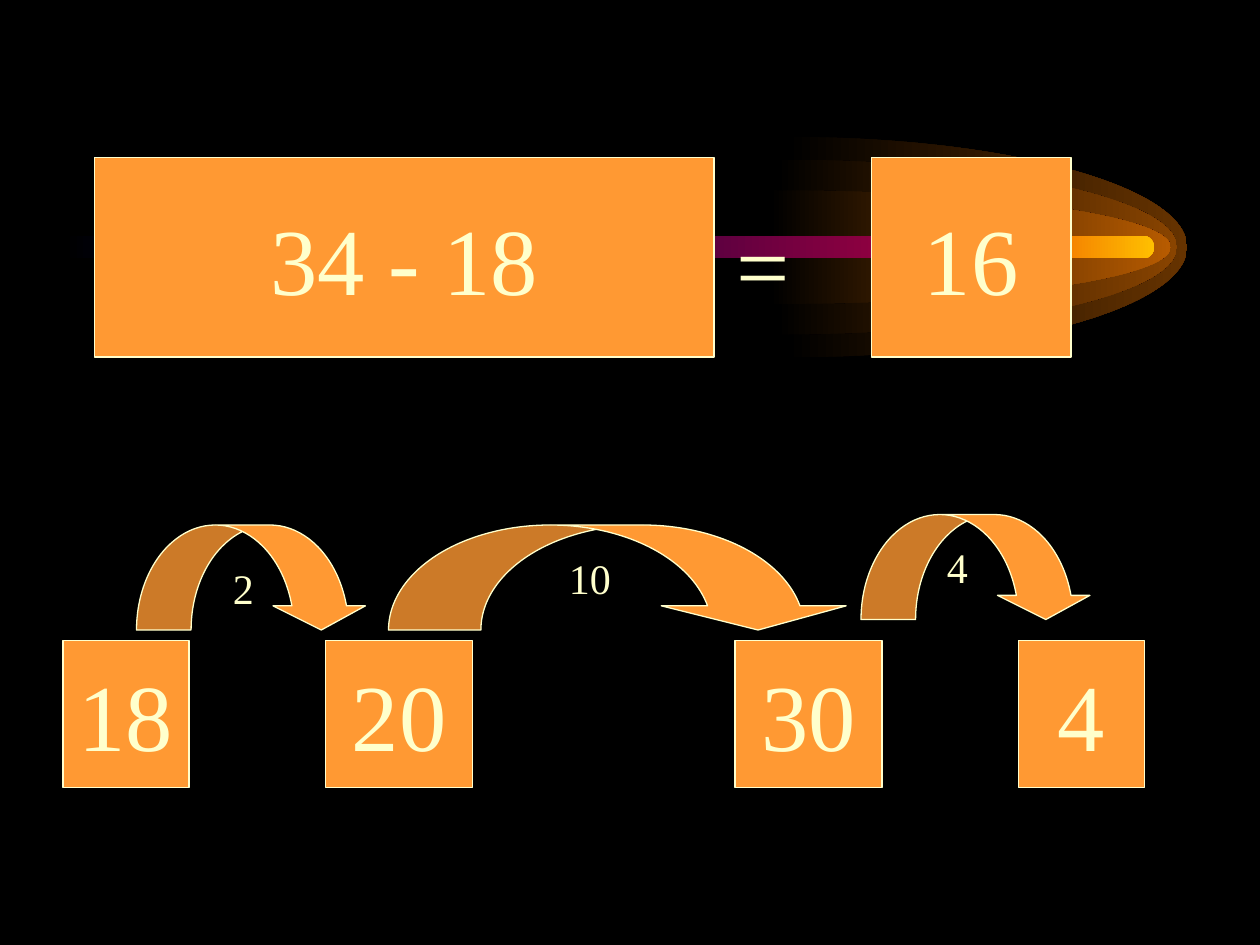
from lxml.etree import SubElement
from pptx import Presentation
from pptx.dml.color import RGBColor
from pptx.enum.shapes import MSO_SHAPE
from pptx.enum.text import MSO_ANCHOR, MSO_AUTO_SIZE, PP_ALIGN
from pptx.oxml.ns import qn
from pptx.util import Pt

BLACK = RGBColor(0x00, 0x00, 0x00)
ORANGE = RGBColor(0xFF, 0x99, 0x33)
CREAM = RGBColor(0xFF, 0xFF, 0xCC)
OUTER_GLOW = RGBColor(0x66, 0x33, 0x00)
MIDDLE_GLOW = RGBColor(0x89, 0x44, 0x00)
INNER_GLOW = RGBColor(0xB7, 0x5B, 0x00)
NAVY = RGBColor(0x00, 0x00, 0x40)
PURPLE = RGBColor(0x40, 0x00, 0x40)
CRIMSON = RGBColor(0x8F, 0x00, 0x40)
AMBER = RGBColor(0xF2, 0x73, 0x00)
GOLD = RGBColor(0xFF, 0xBF, 0x00)


def paint_gradient(shape, stops):
    shape.shadow.inherit = False
    shape.line.fill.background()
    shape.fill.gradient()
    shape.fill.gradient_angle = 0
    stop_list = shape._element.spPr.find(".//" + qn("a:gsLst"))
    for old_stop in list(stop_list):
        stop_list.remove(old_stop)
    for percent, color in stops:
        stop = SubElement(stop_list, qn("a:gs"), pos=str(percent * 1000))
        SubElement(stop, qn("a:srgbClr"), val=str(color))


def write(paragraph, text, size):
    run = paragraph.add_run()
    run.text = text
    run.font.name = "Times New Roman"
    run.font.size = Pt(size)
    run.font.color.rgb = CREAM


deck = Presentation()
deck.slide_width, deck.slide_height = Pt(720), Pt(540)
slide = deck.slides.add_slide(deck.slide_layouts[6])
slide.background.fill.solid()
slide.background.fill.fore_color.rgb = BLACK
shapes = slide.shapes

comet = shapes.add_group_shape().shapes
comet_middle = 141.2
bend = 0.55
half_ellipse = [(0, -1), (bend, -1), (1, -bend), (1, 0), (1, bend), (bend, 1), (0, 1)]
for glow_left, glow_radius, glow_color in [
    (449.3, 63, OUTER_GLOW),
    (443.5, 50, MIDDLE_GLOW),
    (440, 32.5, INNER_GLOW),
]:
    rim = [
        (Pt(glow_left + 229 * across), Pt(comet_middle + glow_radius * down))
        for across, down in half_ellipse
    ]
    outline = comet.build_freeform(*rim[0])
    outline.add_line_segments(rim[1:], close=True)
    glow = outline.convert_to_shape()
    segments = list(glow._element.spPr.iter(qn("a:lnTo")))
    for first in (0, 3):
        curve = SubElement(segments[first].getparent(), qn("a:cubicBezTo"))
        segments[first].addprevious(curve)
        for segment in segments[first : first + 3]:
            curve.append(segment[0])
            segment.getparent().remove(segment)
    paint_gradient(glow, [(0, BLACK), (100, glow_color)])

beam = comet.add_shape(
    MSO_SHAPE.ROUNDED_RECTANGLE, Pt(36), Pt(comet_middle - 6.5), Pt(623.5), Pt(13)
)
beam.adjustments[0] = 0.5
paint_gradient(
    beam,
    [(0, BLACK), (20, NAVY), (50, PURPLE), (75, CRIMSON), (90, AMBER), (100, GOLD)],
)

for number, left, top, width, height in [
    ("34 - 18", 54, 90, 354, 114),
    ("18", 36, 366, 72, 84),
    ("20", 186, 366, 84, 84),
    ("30", 420, 366, 84, 84),
    ("16", 498, 90, 114, 114),
    ("4", 582, 366, 72, 84),
]:
    box = shapes.add_shape(
        MSO_SHAPE.RECTANGLE, Pt(left), Pt(top), Pt(width), Pt(height)
    )
    box.shadow.inherit = False
    box.fill.solid()
    box.fill.fore_color.rgb = ORANGE
    box.line.color.rgb = CREAM
    box.line.width = Pt(0.75)
    box.text_frame.word_wrap = False
    box.text_frame.vertical_anchor = MSO_ANCHOR.MIDDLE
    box.text_frame.paragraphs[0].alignment = PP_ALIGN.CENTER
    write(box.text_frame.paragraphs[0], number, 54)

for left, top, width, band, head in [
    (222, 300, 264, 0.88, 1.76),
    (78, 300, 132, 0.52, 0.88),
    (492, 294, 132, 0.52, 0.88),
]:
    jump = shapes.add_shape(
        MSO_SHAPE.CURVED_DOWN_ARROW, Pt(left), Pt(top), Pt(width), Pt(60)
    )
    jump.shadow.inherit = False
    for index, value in enumerate((band, head, 0.23)):
        jump.adjustments[index] = value
    jump.fill.solid()
    jump.fill.fore_color.rgb = ORANGE
    jump.line.color.rgb = CREAM
    jump.line.width = Pt(0.75)

for label, size, left, top, width, height in [
    ("=", 54, 414, 114, 72, 72),
    ("2", 24, 126, 318, 30, 36),
    ("10", 24, 318, 312, 42, 36),
    ("4", 24, 534, 306, 30, 36),
]:
    caption = shapes.add_textbox(Pt(left), Pt(top), Pt(width), Pt(height)).text_frame
    caption.word_wrap = True
    caption.auto_size = MSO_AUTO_SIZE.SHAPE_TO_FIT_TEXT
    paragraph = caption.paragraphs[0]
    space_before = SubElement(paragraph._p.get_or_add_pPr(), qn("a:spcBef"))
    SubElement(space_before, qn("a:spcPct"), val="50000")
    write(paragraph, label, size)

deck.save("out.pptx")
